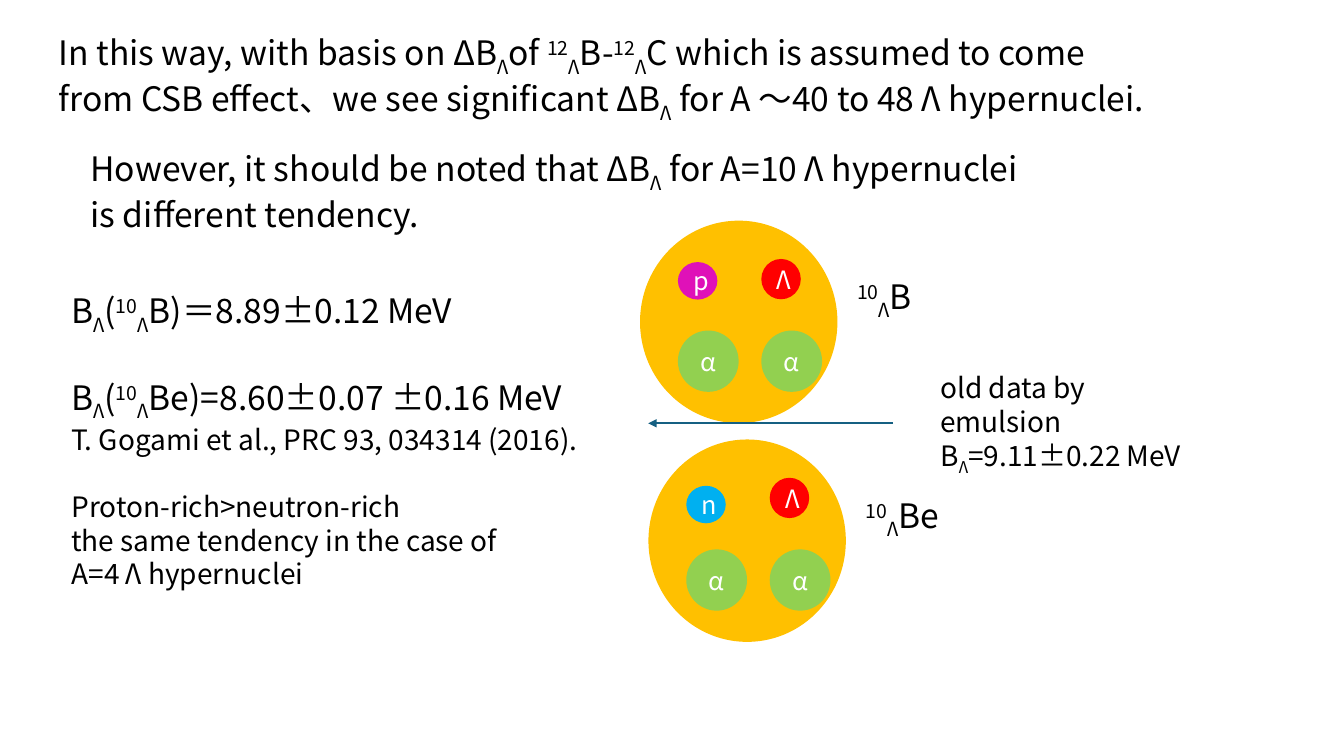
"""Builds the slide on binding energy differences in A=10 hypernuclei."""
from lxml import etree
from pptx import Presentation
from pptx.dml.color import RGBColor
from pptx.enum.shapes import MSO_CONNECTOR, MSO_SHAPE
from pptx.enum.text import MSO_ANCHOR, MSO_AUTO_SIZE, PP_ALIGN
from pptx.oxml.ns import qn
from pptx.util import Pt

OVAL = MSO_SHAPE.OVAL
STRAIGHT = MSO_CONNECTOR.STRAIGHT
TOP, MIDDLE = MSO_ANCHOR.TOP, MSO_ANCHOR.MIDDLE
GROW, FIXED = MSO_AUTO_SIZE.SHAPE_TO_FIT_TEXT, MSO_AUTO_SIZE.NONE
LEFT, CENTER = PP_ALIGN.LEFT, PP_ALIGN.CENTER

BLACK = RGBColor(0x00, 0x00, 0x00)
WHITE = RGBColor(0xFF, 0xFF, 0xFF)
AMBER = RGBColor(0xFF, 0xC0, 0x00)
GREEN = RGBColor(0x92, 0xD0, 0x50)
MAGENTA = RGBColor(0xDF, 0x11, 0xB8)
RED = RGBColor(0xFF, 0x00, 0x00)
SKY = RGBColor(0x00, 0xB0, 0xF0)
TEAL = RGBColor(0x15, 0x60, 0x82)

FONT = "Noto Sans CJK JP"
BASELINES = {"_": "-25000", "^": "30000"}


def write(paragraph, text, size=24, color=BLACK, align=LEFT, before=0):
    """Fill a paragraph; | parts pieces, _ lowers, ^ raises, \\v breaks the line."""
    paragraph.alignment = align
    paragraph.space_before = Pt(before)
    for piece in text.split("|"):
        if piece == "\v":
            paragraph.add_line_break()
            continue
        run = paragraph.add_run()
        run.text = piece.lstrip("_^")
        run.font.name = FONT
        run.font.size = Pt(size)
        run.font.color.rgb = color
        properties = run._r.get_or_add_rPr()
        if piece[0] in BASELINES:
            properties.set("baseline", BASELINES[piece[0]])
        latin = properties.find(qn("a:latin"))
        east_asian = etree.Element(qn("a:ea"), typeface=FONT)
        latin.addnext(east_asian)


class HypernucleiSlide:
    """Holds the current slide and draws its kinds of element."""

    def __init__(self, deck):
        self.slide = deck.slides.add_slide(deck.slide_layouts[5])
        self.shapes = self.slide.shapes

    def fill_frame(self, frame, lines):
        for index, (text, style) in enumerate(lines):
            paragraph = frame.add_paragraph() if index else frame.paragraphs[0]
            write(paragraph, text, **style)

    def title(self, left, top, width, height, lines):
        heading = self.shapes.title
        heading.left, heading.top = Pt(left), Pt(top)
        heading.width, heading.height = Pt(width), Pt(height)
        frame = heading.text_frame
        frame.vertical_anchor = TOP
        frame.auto_size = FIXED
        frame.word_wrap = True
        self.fill_frame(frame, lines)

    def text(self, left, top, width, height, lines, wrap=False, inset=3.6):
        box = self.shapes.add_textbox(Pt(left), Pt(top), Pt(width), Pt(height))
        frame = box.text_frame
        frame.word_wrap = wrap
        frame.auto_size = GROW
        frame.margin_top = Pt(inset)
        self.fill_frame(frame, lines)

    def circle(self, left, top, width, height, color, symbol=""):
        circle = self.shapes.add_shape(OVAL, Pt(left), Pt(top), Pt(width), Pt(height))
        circle.shadow.inherit = False
        circle.fill.solid()
        circle.fill.fore_color.rgb = color
        circle.line.fill.background()
        if symbol:
            circle.text_frame.vertical_anchor = MIDDLE
            write(circle.text_frame.paragraphs[0], symbol, 18, WHITE, CENTER)

    def nucleus(self, left, top, nucleon, nucleon_color, nucleon_drop, label, label_width):
        near, far = left + 27, left + 86.6
        self.circle(left, top, 141, 144.6, AMBER)
        for alpha_left in (near, far):
            self.circle(alpha_left, top + 78.5, 43.4, 43.8, GREEN, "α")
        self.circle(near, top + nucleon_drop, 28.2, 26.8, nucleon_color, nucleon)
        self.circle(far, top + 27.4, 28.2, 28.8, RED, "Λ")
        self.text(left + 148, top + 36, label_width, 36, [(label, {})])

    def arrow(self, start_x, end_x, y):
        arrow = self.shapes.add_connector(STRAIGHT, Pt(start_x), Pt(y), Pt(end_x), Pt(y))
        arrow.line.color.rgb = TEAL
        arrow.line.width = Pt(1.5)
        line = arrow.line._get_or_add_ln()
        etree.SubElement(line, qn("a:tailEnd"), type="triangle")
        etree.SubElement(arrow._element.spPr, qn("a:effectLst"))


def main():
    deck = Presentation()
    deck.slide_width, deck.slide_height = Pt(960), Pt(540)
    page = HypernucleiSlide(deck)
    small = {"size": 20}

    page.title(34.6, 19.4, 852.5, 65.5, [
        ("In this way, with basis on ΔB|_Λ|of |^12|_Λ|B-|^12|_Λ|C which is assumed to come", {}),
        ("from CSB effect、we see significant ΔB|_Λ| for A ～40 to 48 Λ hypernuclei.", {}),
    ])
    page.text(57.6, 102.2, 722.9, 65.5, [
        ("However, it should be noted that ΔB|_Λ| for A=10 Λ hypernuclei", {}),
        ("is different tendency.", {}),
    ])
    page.text(43.9, 175, 399.6, 273.6, [
        ("B|_Λ|(|^10|_Λ|B)＝8.89±0.12 MeV", {}),
        ("B|_Λ|(|^10|_Λ|Be)=8.60±0.07 ±0.16 MeV", {"before": 28.8}),
        ("T. Gogami et al., PRC 93, 034314 (2016).", small),
        ("Proton-rich>neutron-rich", {"size": 20, "before": 24}),
        ("the same tendency in the case of", small),
        ("A=4 Λ hypernuclei", small),
    ], wrap=True, inset=32.4)

    page.nucleus(457.2, 157.6, "p", MAGENTA, 29.6, "^10|_Λ|B", 64.8)
    page.nucleus(463.2, 313.9, "n", SKY, 33.1, "^10|_Λ|Be", 78.5)
    page.arrow(638, 463, 302.4)
    page.text(664.6, 261.4, 207.4, 55.4, [
        ("old data by |\v|emulsion", small),
        ("B|_Λ|=9.11±0.22 MeV", small),
    ])
    deck.save("out.pptx")


if __name__ == "__main__":
    main()
